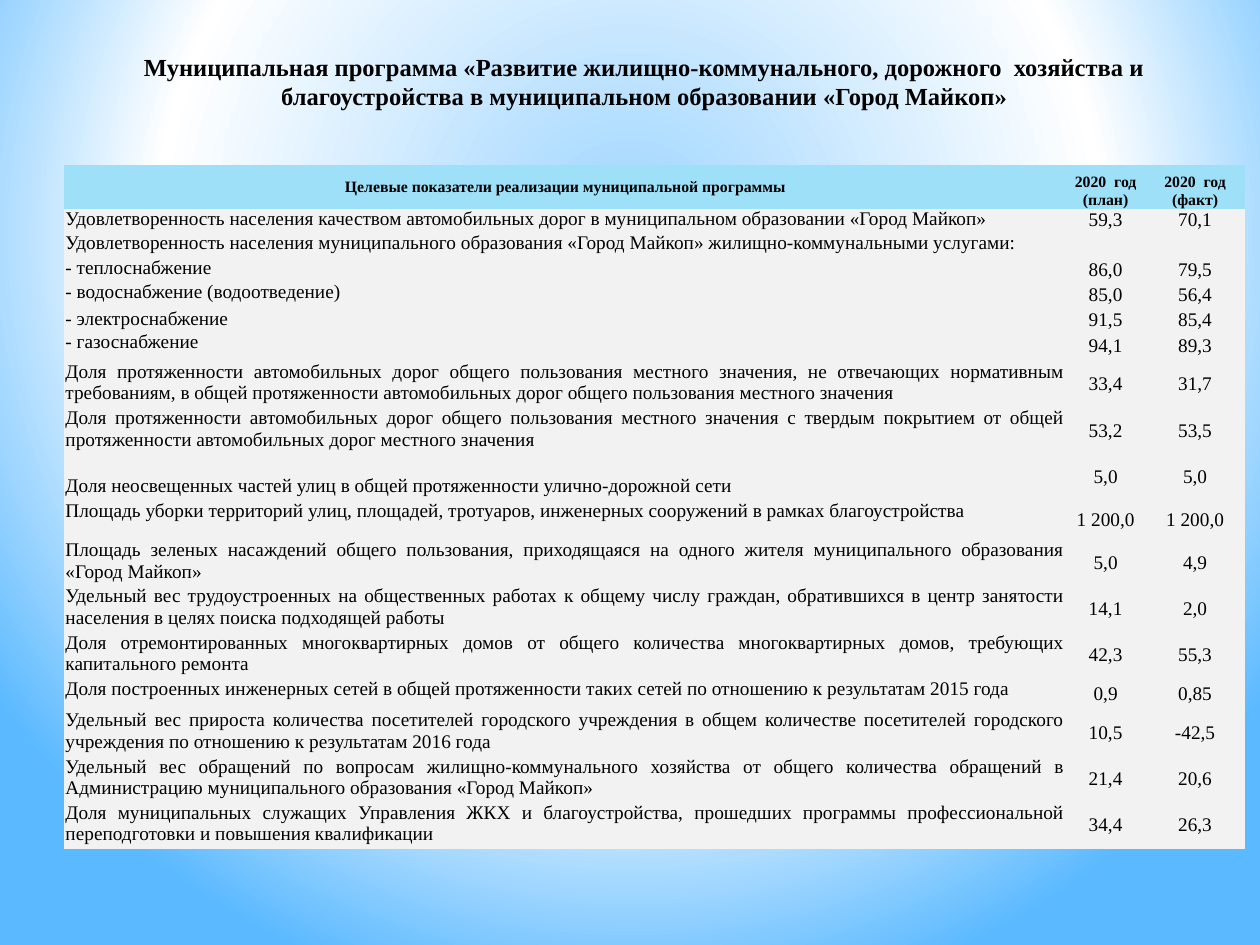
from dataclasses import dataclass

from lxml import etree
from pptx import Presentation
from pptx.dml.color import RGBColor
from pptx.enum.text import MSO_ANCHOR, MSO_AUTO_SIZE, PP_ALIGN
from pptx.oxml import parse_xml
from pptx.oxml.ns import nsdecls, qn
from pptx.util import Inches, Pt

TOP, MIDDLE, BOTTOM = MSO_ANCHOR.TOP, MSO_ANCHOR.MIDDLE, MSO_ANCHOR.BOTTOM
CENTER, JUSTIFY = PP_ALIGN.CENTER, PP_ALIGN.JUSTIFY
FONT = "Times New Roman"
BLACK = RGBColor(0x00, 0x00, 0x00)
HEADER_FILL = RGBColor(0x9E, 0xE0, 0xF8)
BODY_FILL = RGBColor(0xF2, 0xF2, 0xF2)
GRADIENT = (
    (0, RGBColor(0x9E, 0xD5, 0xFF)),
    (60, RGBColor(0xFF, 0xFF, 0xFF)),
    (100, RGBColor(0x5B, 0xB9, 0xFF)),
)
NO_STYLE = "{2D5ABB26-0587-4C30-8999-92F81FD0307C}"
LEFT, WIDTH = 0.51, 9.37
COLUMNS = (7.95, 0.63, 0.79)
HEADER_HEIGHT = 25
TWO_LINES = 26.4
TITLE = (
    "Муниципальная программа «Развитие жилищно-коммунального, дорожного  хозяйства и "
    "благоустройства в муниципальном образовании «Город Майкоп»"
)
HEADINGS = (
    "Целевые показатели реализации муниципальной программы",
    "2020  год (план)",
    "2020  год (факт)",
)


@dataclass
class Indicator:
    name: str
    plan: str = ""
    fact: str = ""
    height: float = TWO_LINES
    anchor: MSO_ANCHOR = TOP


INDICATORS = (
    Indicator("Удовлетворенность населения качеством автомобильных дорог в муниципальном "
              "образовании «Город Майкоп»", "59,3", "70,1", 13),
    Indicator("Удовлетворенность населения муниципального образования «Город Майкоп» "
              "жилищно-коммунальными услугами:", height=14.5),
    Indicator("- теплоснабжение", "86,0", "79,5", 14),
    Indicator("- водоснабжение (водоотведение)", "85,0", "56,4", 15),
    Indicator("- электроснабжение", "91,5", "85,4", 13.5),
    Indicator("- газоснабжение", "94,1", "89,3", 17),
    Indicator("Доля протяженности автомобильных дорог общего пользования местного значения, "
              "не отвечающих нормативным требованиям, в общей протяженности автомобильных "
              "дорог общего пользования местного значения", "33,4", "31,7"),
    Indicator("Доля протяженности автомобильных дорог общего пользования местного значения "
              "с твердым покрытием от общей протяженности автомобильных дорог местного "
              "значения", "53,2", "53,5"),
    Indicator("Доля неосвещенных частей улиц в общей протяженности улично-дорожной сети",
              "5,0", "5,0", anchor=BOTTOM),
    Indicator("Площадь уборки территорий улиц, площадей, тротуаров, инженерных сооружений "
              "в рамках благоустройства", "1 200,0", "1 200,0", 22.5),
    Indicator("Площадь зеленых насаждений общего пользования, приходящаяся на одного жителя "
              "муниципального образования «Город Майкоп»", "5,0", "4,9"),
    Indicator("Удельный вес трудоустроенных на общественных работах к общему числу граждан, "
              "обратившихся в центр занятости населения в целях поиска подходящей работы",
              "14,1", "2,0"),
    Indicator("Доля отремонтированных многоквартирных домов от общего количества "
              "многоквартирных домов, требующих капитального ремонта", "42,3", "55,3"),
    Indicator("Доля построенных инженерных сетей в общей протяженности таких сетей по "
              "отношению к результатам 2015 года", "0,9", "0,85", 18),
    Indicator("Удельный вес прироста количества посетителей городского учреждения в общем "
              "количестве посетителей городского учреждения по отношению к результатам "
              "2016 года", "10,5", "-42,5"),
    Indicator("Удельный вес обращений по вопросам жилищно-коммунального хозяйства от общего "
              "количества обращений в Администрацию муниципального образования "
              "«Город Майкоп»", "21,4", "20,6"),
    Indicator("Доля муниципальных служащих Управления ЖКХ и благоустройства, прошедших "
              "программы профессиональной переподготовки и повышения квалификации",
              "34,4", "26,3"),
)


def set_background(s) -> None:
    s.background.fill.solid()
    solid = s._element.find(".//" + qn("p:bgPr")).find(qn("a:solidFill"))
    grad = parse_xml(
        f'<a:gradFill {nsdecls("a")} rotWithShape="1"><a:gsLst/>'
        '<a:path path="circle"><a:fillToRect l="20000" t="10000" r="20000" b="60000"/>'
        "</a:path></a:gradFill>"
    )
    for share, color in GRADIENT:
        stop = etree.SubElement(grad[0], qn("a:gs"), pos=str(share * 1000))
        etree.SubElement(stop, qn("a:srgbClr"), val=str(color))
    solid.getparent().replace(solid, grad)


def format_paragraph(p, size: float, bold: bool, align: PP_ALIGN) -> None:
    p.alignment = align
    p.font.name = FONT
    p.font.size = Pt(size)
    p.font.bold = bold
    p.font.color.rgb = BLACK


def add_title(s) -> None:
    sp = s.shapes.title
    sp.left, sp.top, sp.width, sp.height = map(Inches, (0.43, 0.36, WIDTH, 0.57))
    tf = sp.text_frame
    tf.text = TITLE
    tf.word_wrap = True
    tf.auto_size = MSO_AUTO_SIZE.SHAPE_TO_FIT_TEXT
    tf.vertical_anchor = MIDDLE
    format_paragraph(tf.paragraphs[0], 14, True, CENTER)


def fill_cell(cell, text: str, anchor: MSO_ANCHOR, align: PP_ALIGN, header: bool = False) -> None:
    cell.text = text
    cell.fill.solid()
    cell.fill.fore_color.rgb = HEADER_FILL if header else BODY_FILL
    cell.vertical_anchor = anchor
    cell.margin_left = cell.margin_right = Inches(0.01)
    cell.margin_top = Inches(0.01 if header else 0)
    cell.margin_bottom = Inches(0.03 if anchor == BOTTOM and not header else 0)
    format_paragraph(cell.text_frame.paragraphs[0], 9 if header else 11, header, align)


def add_indicator_table(s) -> None:
    heights = [HEADER_HEIGHT] + [item.height for item in INDICATORS]
    frame = s.shapes.add_table(
        len(heights), len(COLUMNS), Inches(LEFT), Inches(1.31), Inches(WIDTH), Pt(sum(heights))
    )
    table = frame.table
    table.first_row = table.horz_banding = False
    table._tbl.tblPr.find(qn("a:tableStyleId")).text = NO_STYLE
    for column, width in zip(table.columns, COLUMNS):
        column.width = Inches(width)
    for row, height in zip(table.rows, heights):
        row.height = Pt(height)
    for col, heading in enumerate(HEADINGS):
        fill_cell(table.cell(0, col), heading, BOTTOM if col else MIDDLE, CENTER, header=True)
    for row, item in enumerate(INDICATORS, 1):
        fill_cell(table.cell(row, 0), item.name, item.anchor, JUSTIFY)
        for col, value in enumerate((item.plan, item.fact), 1):
            fill_cell(table.cell(row, col), value, MIDDLE, CENTER)


def main() -> None:
    prs = Presentation()
    prs.slide_width, prs.slide_height = Inches(10), Inches(7.5)
    s = prs.slides.add_slide(prs.slide_layouts[5])
    set_background(s)
    add_title(s)
    add_indicator_table(s)
    prs.save("out.pptx")


if __name__ == "__main__":
    main()
